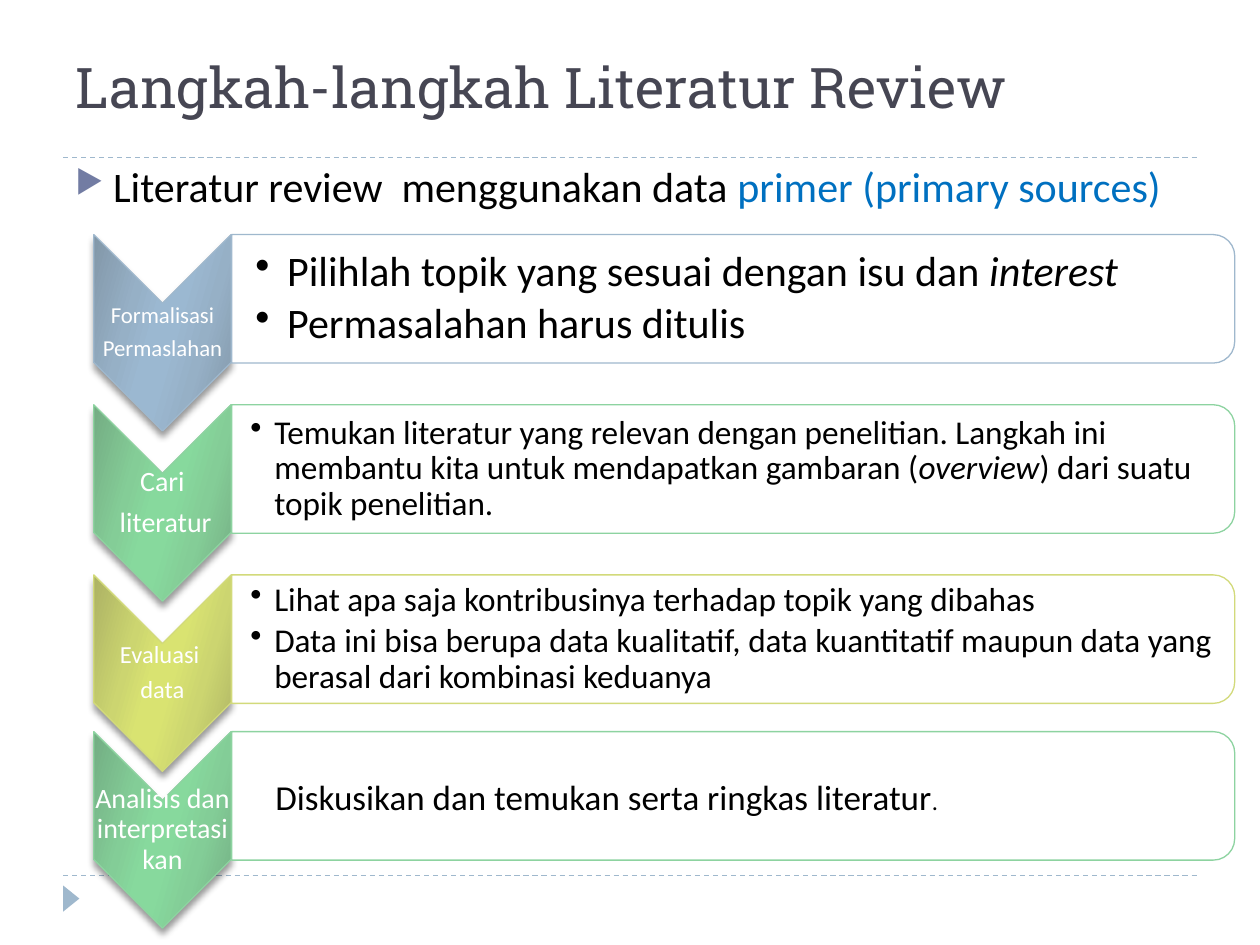
from lxml import etree
from pptx import Presentation
from pptx.dml.color import RGBColor
from pptx.enum.dml import MSO_LINE
from pptx.enum.shapes import MSO_CONNECTOR, MSO_SHAPE
from pptx.enum.text import MSO_ANCHOR, PP_ALIGN
from pptx.oxml import parse_xml
from pptx.oxml.ns import qn
from pptx.util import Cm, Pt

DASH = MSO_LINE.DASH
STRAIGHT = MSO_CONNECTOR.STRAIGHT
CHEVRON, TRIANGLE = MSO_SHAPE.CHEVRON, MSO_SHAPE.ISOSCELES_TRIANGLE
ROUND_TOP = MSO_SHAPE.ROUND_2_SAME_RECTANGLE
MIDDLE, BOTTOM = MSO_ANCHOR.MIDDLE, MSO_ANCHOR.BOTTOM
LEFT, CENTER = PP_ALIGN.LEFT, PP_ALIGN.CENTER
NS = 'xmlns:a="http://schemas.openxmlformats.org/drawingml/2006/main"'
rgb = RGBColor.from_string

CHEVRON_LEFT, CHEVRON_WIDTH, CHEVRON_HEIGHT = 1.89, 2.77, 3.96
PANEL_LEFT, PANEL_WIDTH, PANEL_HEIGHT = 4.67, 20.22, 2.59

# top, line colour, gradient (edge, middle, core), label lines, label size,
# text size, indent, bulleted, paragraphs (every second part is italic)
STEPS = [
    (4.73, "9FB8CD", ("8297A8", "96B0C6", "9BB8D1"),
     ["Formalisasi", "Permaslahan"], 13, 24, 0.64, True,
     [["Pilihlah topik yang sesuai dengan isu dan ", "interest"],
      ["Permasalahan harus ditulis"]]),
    (8.16, "8DD3A0", ("74AC83", "84CD97", "87D99D"),
     ["Cari", " literatur"], 16, 19, 0.48, True,
     [["Temukan literatur yang relevan dengan penelitian. Langkah ini "
       "membantu kita untuk mendapatkan gambaran (", "overview",
       ") dari suatu topik penelitian."]]),
    (11.59, "D2DA7A", ("ACB264", "CCD570", "D9E371"),
     ["Evaluasi ", "data"], 14, 19, 0.48, True,
     [["Lihat apa saja kontribusinya terhadap topik yang dibahas"],
      ["Data ini bisa berupa data kualitatif, data kuantitatif maupun data "
       "yang berasal dari kombinasi keduanya"]]),
    (14.75, "8DD3A0", ("73AD83", "83CD97", "87D99D"),
     ["Analisis dan interpretasikan"], 16, 20, 0.48, False,
     [["Diskusikan dan temukan serta ringkas literatur"]]),
]

prs = Presentation()
prs.slide_width, prs.slide_height = Cm(25.4), Cm(19.05)
slide = prs.slides.add_slide(prs.slide_layouts[5])
shapes = slide.shapes


def add_turned(kind, left, top, width, height):
    """Add a shape turned by 90 degrees that covers the given box."""
    shape = shapes.add_shape(kind, Cm(left + (width - height) / 2),
                             Cm(top + (height - width) / 2),
                             Cm(height), Cm(width))
    shape.rotation = 90
    shape.shadow.inherit = False
    return shape


def format_run(run, size, color, font="Calibri"):
    run.font.size = Pt(size)
    run.font.name = font
    run.font.color.rgb = rgb(color)


# Title
title = shapes.title
title.left, title.top, title.width, title.height = Cm(1.27), Cm(0.43), Cm(22.86), Cm(2.11)
title.text_frame.text = "Langkah-langkah Literatur Review"
title.text_frame.vertical_anchor = BOTTOM
heading = title.text_frame.paragraphs[0]
heading.alignment = LEFT
format_run(heading.runs[0], 32, "464653", "Roboto Slab")

# Rules and corner mark
for y in (17.65, 3.18):
    rule = shapes.add_connector(STRAIGHT, Cm(1.27), Cm(y), Cm(24.13), Cm(y))
    rule.line.color.rgb = rgb("9FB8CD")
    rule.line.width = Pt(0.75)
    rule.line.dash_style = DASH
    etree.SubElement(rule._element.spPr, qn("a:effectLst"))
corner_mark = add_turned(TRIANGLE, 1.27, 17.85, 0.33, 0.53)
corner_mark.fill.solid()
corner_mark.fill.fore_color.rgb = rgb("9FB8CD")
corner_mark.line.fill.background()

# Introduction
intro = shapes.add_textbox(Cm(1.27), Cm(3.12), Cm(22.86), Cm(1.4)).text_frame
intro.word_wrap = True
intro_line = intro.paragraphs[0]
for part, color in (("Literatur review  menggunakan data ", "000000"),
                    ("primer (primary sources)", "0070C0")):
    run = intro_line.add_run()
    run.text = part
    format_run(run, 24, color)
intro_props = intro_line._p.get_or_add_pPr()
intro_props.set("marL", str(Cm(0.76)))
intro_props.set("indent", str(-Cm(0.76)))
for bullet in (f'<a:buClr {NS}><a:srgbClr val="727CA3"/></a:buClr>',
               f'<a:buSzPct {NS} val="76000"/>',
               f'<a:buChar {NS} char="▶"/>'):
    intro_props.append(parse_xml(bullet))

# Steps
for (top, color, (edge, middle, core), label_lines, label_size,
     size, indent, bulleted, paragraphs) in STEPS:
    chevron = add_turned(CHEVRON, CHEVRON_LEFT, top, CHEVRON_WIDTH, CHEVRON_HEIGHT)
    stops = zip((0, 30, 45, 55, 73, 100), (edge, middle, core, core, middle, edge))
    stop_xml = "".join(f'<a:gs pos="{pos * 1000}"><a:srgbClr val="{shade}"/></a:gs>'
                       for pos, shade in stops)
    chevron._element.spPr.find(qn("a:prstGeom")).addnext(parse_xml(
        f'<a:gradFill {NS} rotWithShape="0"><a:gsLst>{stop_xml}</a:gsLst>'
        '<a:lin ang="960000" scaled="0"/></a:gradFill>'))
    chevron._element.spPr.find(qn("a:effectLst")).append(parse_xml(
        f'<a:outerShdw {NS} blurRad="{Pt(4)}" dist="{Pt(3.4)}" dir="5400000" '
        'rotWithShape="0"><a:srgbClr val="000000"><a:alpha val="40000"/>'
        '</a:srgbClr></a:outerShdw>'))

    label = shapes.add_textbox(Cm(CHEVRON_LEFT), Cm(top + CHEVRON_WIDTH / 2),
                               Cm(CHEVRON_WIDTH), Cm(1.19)).text_frame
    label.text = "\n".join(label_lines)
    for paragraph in label.paragraphs:
        paragraph.alignment = CENTER
        paragraph.line_spacing = 0.9
        paragraph.space_after = Pt(round(label_size * 0.35, 1))
        format_run(paragraph.runs[0], label_size, "FFFFFF")

    panel = add_turned(ROUND_TOP, PANEL_LEFT, top, PANEL_WIDTH, PANEL_HEIGHT)
    panel.fill.solid()
    panel.fill.fore_color.rgb = rgb("FFFFFF")
    for outlined in (chevron, panel):
        outlined.line.color.rgb = rgb(color)
        outlined.line.width = Pt(0.75)

    details = shapes.add_textbox(Cm(PANEL_LEFT), Cm(top + 0.13),
                                 Cm(PANEL_WIDTH - 0.13), Cm(2.34)).text_frame
    for frame in (label, details):
        frame.word_wrap = True
        frame.vertical_anchor = MIDDLE
        frame.margin_left = frame.margin_right = Cm(0.03)
        frame.margin_top = frame.margin_bottom = Cm(0.03)
    details.margin_left = Cm(0.02 * size)
    details.text = "\n".join("".join(parts[:1]) for parts in paragraphs)
    for paragraph, parts in zip(details.paragraphs, paragraphs):
        for part in parts[1:]:
            paragraph.add_run().text = part
        for number, run in enumerate(paragraph.runs):
            format_run(run, size, "000000")
            run.font.italic = number % 2 == 1
        props = paragraph._p.get_or_add_pPr()
        props.set("marL", str(Cm(indent)))
        if bulleted:
            paragraph.line_spacing = 0.9
            paragraph.space_after = Pt(round(size * 0.15, 1))
            props.set("indent", str(-Cm(indent)))
            props.append(parse_xml(f'<a:buChar {NS} char="•"/>'))

full_stop = details.paragraphs[0].add_run()
full_stop.text = "."
format_run(full_stop, 14, "000000")

prs.save("out.pptx")
